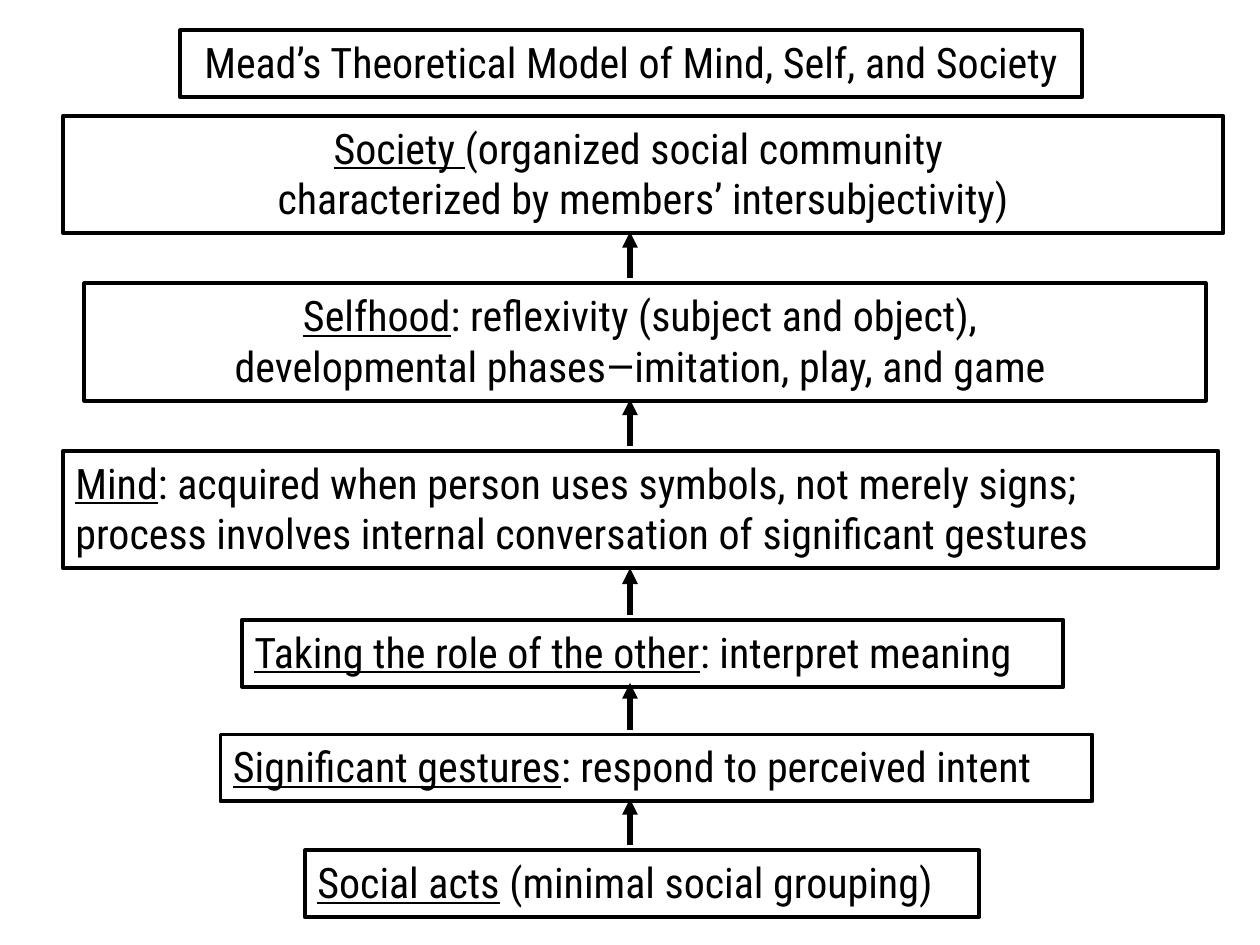
from lxml.etree import SubElement
from pptx import Presentation
from pptx.dml.color import RGBColor
from pptx.enum.shapes import MSO_CONNECTOR, MSO_SHAPE
from pptx.enum.text import MSO_ANCHOR, MSO_AUTO_SIZE, PP_ALIGN
from pptx.oxml.ns import qn
from pptx.util import Inches, Pt

COLORS = {"ink": "000000", "paper": "FFFFFF"}
FONT = "Roboto Condensed"
CENTER, LEFT = PP_ALIGN.CENTER, PP_ALIGN.LEFT
ARROW_X, ARROW_GAP, ARROW_LENGTH = 5, 0.04, 0.37

TITLE = "Mead’s Theoretical Model of Mind, Self, and Society"
TITLE_BOX = (1.43, 0.24, 7.16, 0.53)
STAGES = [
    ((0.5, 0.92, 9.21, 0.93), CENTER, "Society ",
     ["(organized social community ", "characterized by members’ intersubjectivity)"]),
    ((0.67, 2.25, 8.9, 0.93), CENTER, "Selfhood",
     [": reflexivity (subject and object), ",
      "developmental phases—imitation, play, and game "]),
    ((0.5, 3.58, 9.17, 0.93), LEFT, "Mind",
     [": acquired when person uses symbols, not merely signs; "
      "process involves internal conversation of significant gestures"]),
    ((1.92, 4.92, 6.52, 0.53), LEFT, "Taking the role of the other",
     [": interpret meaning"]),
    ((1.75, 5.83, 6.92, 0.53), LEFT, "Significant gestures",
     [": respond to perceived intent"]),
    ((2.42, 6.75, 5.35, 0.53), LEFT, "Social acts", [" (minimal social grouping)"]),
]


def color(name):
    return RGBColor.from_string(COLORS[name])


def add_text(para, text, size=24, underline=False):
    span = para.add_run()
    span.text = text
    span.font.name = FONT
    span.font.size = Pt(size)
    span.font.underline = underline
    span.font.color.rgb = color("ink")


def format_box(shape):
    shape.fill.solid()
    shape.fill.fore_color.rgb = color("paper")
    shape.line.color.rgb = color("ink")
    shape.line.width = Pt(2.25)
    frame = shape.text_frame
    frame.word_wrap = True
    frame.auto_size = MSO_AUTO_SIZE.NONE
    frame.vertical_anchor = MSO_ANCHOR.TOP
    return frame


def place_title(page, box):
    title = page.shapes.title
    title.left, title.top, title.width, title.height = map(Inches, box)
    para = format_box(title).paragraphs[0]
    para.alignment = CENTER
    add_text(para, TITLE)


def add_stage(page, box, alignment, term, lines):
    shape = page.shapes.add_shape(MSO_SHAPE.RECTANGLE, *map(Inches, box))
    shape.shadow.inherit = False
    frame = format_box(shape)
    for index, line in enumerate(lines):
        para = frame.add_paragraph() if index else frame.paragraphs[0]
        para.alignment = alignment
        if index == 0:
            add_text(para, term, underline=True)
        add_text(para, line)


def add_arrow_above(page, box):
    start = box[1] - ARROW_GAP
    arrow = page.shapes.add_connector(
        MSO_CONNECTOR.STRAIGHT, Inches(ARROW_X), Inches(start),
        Inches(ARROW_X), Inches(start - ARROW_LENGTH))
    arrow.line.color.rgb = color("ink")
    arrow.line.width = Pt(3)
    SubElement(arrow.line._get_or_add_ln(), qn("a:tailEnd"), type="triangle")
    SubElement(arrow._element.spPr, qn("a:effectLst"))


def main():
    deck = Presentation()
    deck.slide_width, deck.slide_height = Inches(10), Inches(7.5)
    page = deck.slides.add_slide(deck.slide_layouts[5])
    place_title(page, TITLE_BOX)
    for stage in STAGES:
        add_stage(page, *stage)
    for box, *_ in STAGES[1:]:
        add_arrow_above(page, box)
    deck.save("out.pptx")


if __name__ == "__main__":
    main()
